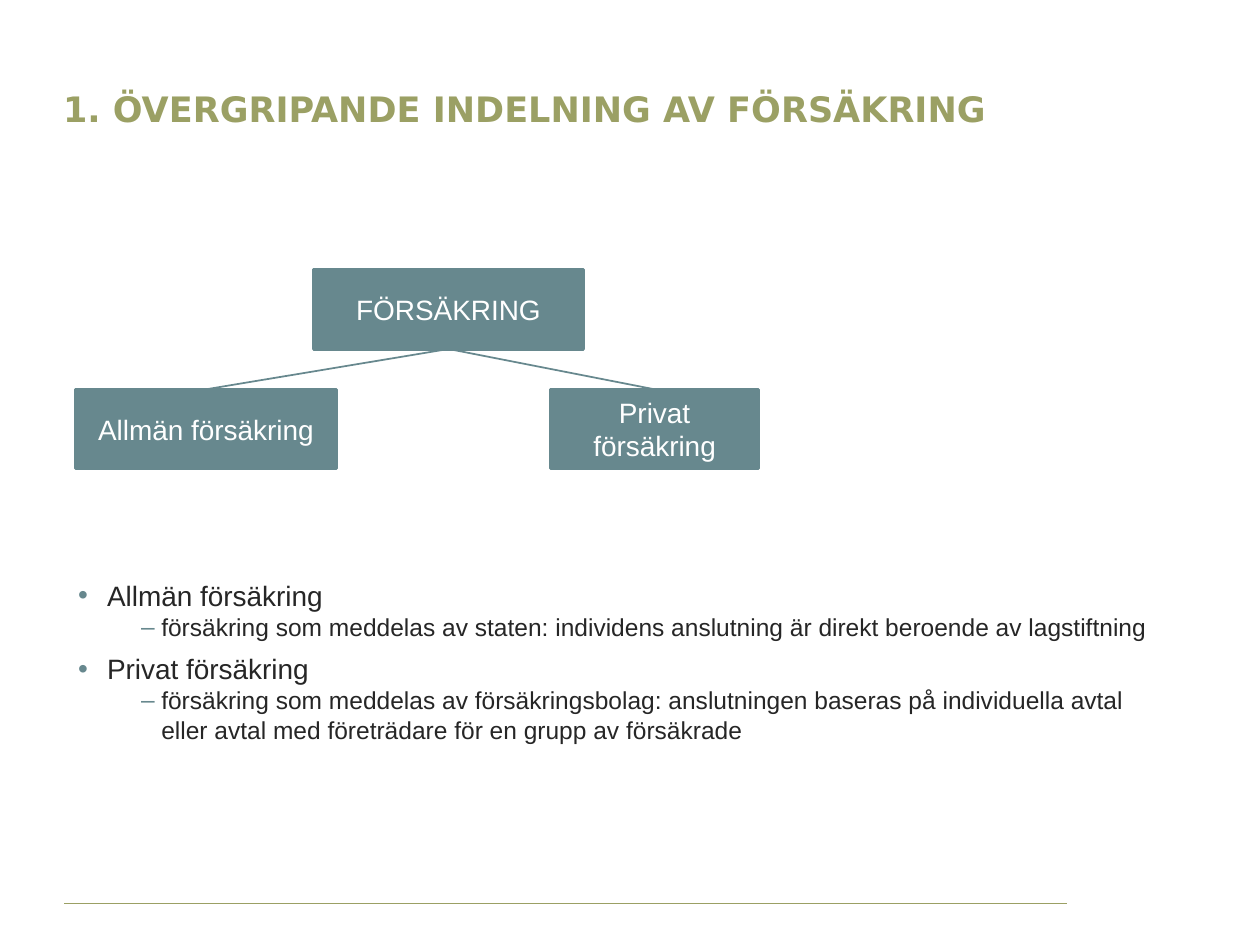
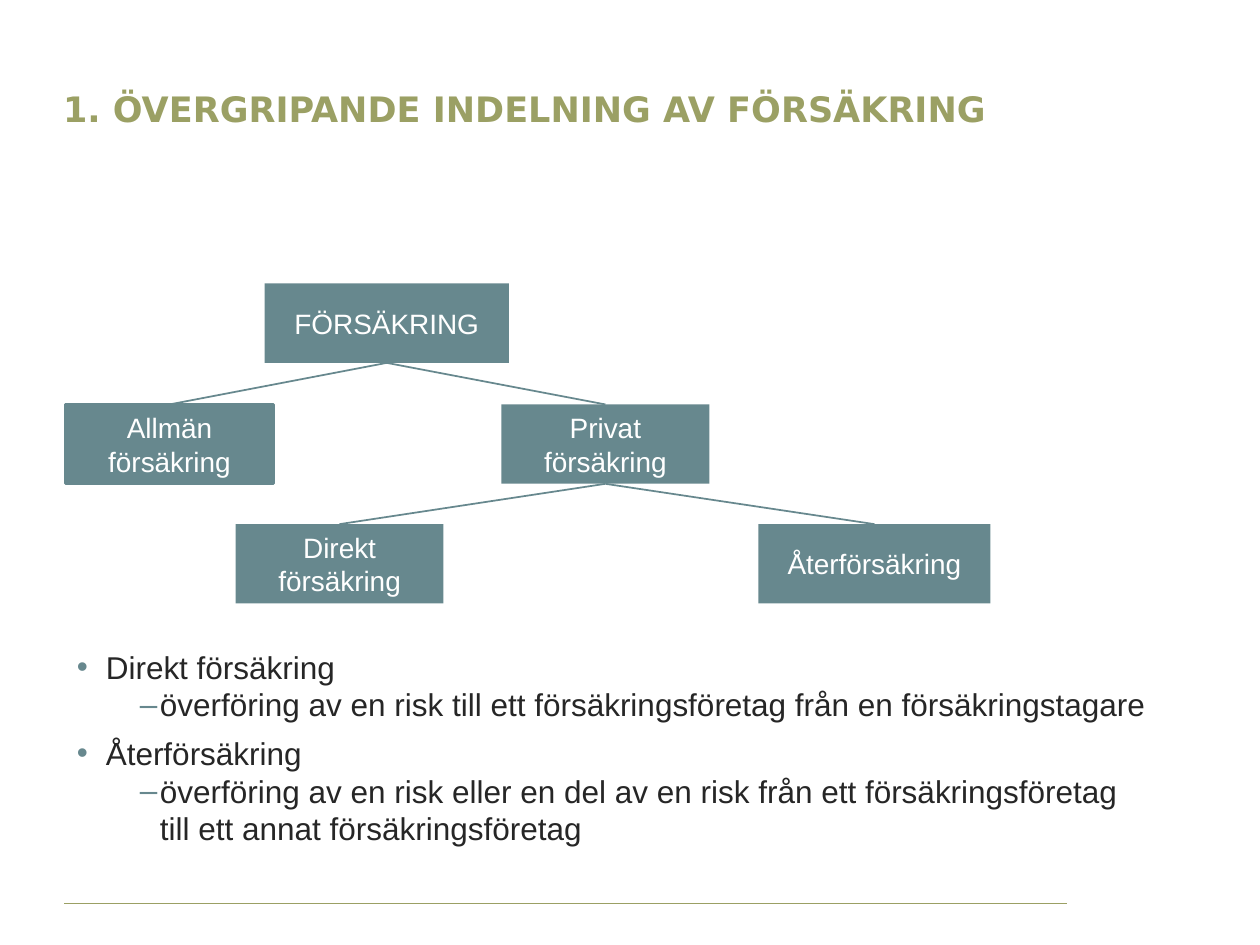
from lxml.etree import SubElement
from pptx import Presentation
from pptx.dml.color import RGBColor
from pptx.enum.shapes import MSO_CONNECTOR as CONNECTOR, MSO_SHAPE as SHAPE
from pptx.enum.text import MSO_ANCHOR as ANCHOR, MSO_AUTO_SIZE as AUTO_SIZE, PP_ALIGN as ALIGN
from pptx.oxml.ns import qn
from pptx.util import Inches, Pt

TEAL, OLIVE, DARK, WHITE = "67888E", "9BA064", "262626", "FFFFFF"
BODY_FONT, TITLE_FONT = "Arial", "DejaVu Sans"
TITLE = "1. ÖVERGRIPANDE INDELNING AV FÖRSÄKRING"
BOX_HEIGHT = 0.63
# Bullet, left margin, hanging indent and space before, by list level
LEVELS = [("•", 0.23, 0.23, 6), ("–", 0.66, 0.16, 0)]


def set_colour(colour_format, value):
    colour_format.rgb = RGBColor.from_string(value)


def write(paragraph, text, size=16, font=BODY_FONT, colour=DARK, bold=False, align=ALIGN.LEFT):
    paragraph.alignment = align
    run = paragraph.add_run()
    run.text = text
    run.font.size = Pt(size)
    run.font.name = font
    run.font.bold = bold
    set_colour(run.font.color, colour)


def place(shape, left, top, width, height):
    shape.left, shape.top = Inches(left), Inches(top)
    shape.width, shape.height = Inches(width), Inches(height)


def add_line(slide, start=(0, 0), end=(0, 0), colour=TEAL, width=1):
    line = slide.shapes.add_connector(CONNECTOR.STRAIGHT, *map(Inches, start + end))
    SubElement(line._element.spPr, qn("a:effectLst"))
    set_colour(line.line.color, colour)
    line.line.width = Pt(width)
    return line


def join(slide, parent, child):
    """Connect the bottom of the parent box to the top of the child box."""
    line = add_line(slide)
    line.begin_connect(parent, 2)
    line.end_connect(child, 0)


def add_box(slide, text, left, top, width, outlined=False):
    box = slide.shapes.add_shape(SHAPE.RECTANGLE, *map(Inches, (left, top, width, BOX_HEIGHT)))
    box.shadow.inherit = False
    box.fill.solid()
    set_colour(box.fill.fore_color, TEAL)
    if outlined:
        set_colour(box.line.color, TEAL)
        box.line.width = Pt(2)
    else:
        box.line.fill.background()
    frame = box.text_frame
    frame.word_wrap = True
    frame.vertical_anchor = ANCHOR.MIDDLE
    write(frame.paragraphs[0], text, colour=WHITE, align=ALIGN.CENTER)
    return box


def add_bullet(paragraph, level):
    symbol, margin, hanging, _ = LEVELS[level]
    properties = paragraph._p.get_or_add_pPr()
    properties.set("marL", str(Inches(margin)))
    properties.set("indent", str(-Inches(hanging)))
    colour = SubElement(properties, qn("a:buClr"))
    SubElement(colour, qn("a:srgbClr"), val=TEAL)
    SubElement(properties, qn("a:buFont"), typeface=BODY_FONT)
    SubElement(properties, qn("a:buChar"), char=symbol)


def fill_list(slide, items, sizes, position):
    """Write (level, text) items in the body placeholder, with one size per level."""
    body = slide.placeholders[1]
    place(body, *position)
    frame = body.text_frame
    frame.word_wrap = True
    frame.auto_size = AUTO_SIZE.NONE
    for index, (level, text) in enumerate(items):
        paragraph = frame.add_paragraph() if index else frame.paragraphs[0]
        paragraph.level = level
        paragraph.space_before = Pt(LEVELS[level][3] if index else 0)
        add_bullet(paragraph, level)
        write(paragraph, text, size=sizes[level])


def new_slide(presentation):
    """Add a slide with the shared title and bottom rule."""
    slide = presentation.slides.add_slide(presentation.slide_layouts[1])
    add_line(slide, (0.51, 7.17), (8.47, 7.17), colour=OLIVE, width=0.75)
    title = slide.shapes.title
    place(title, 0.5, 0.37, 8.98, 0.71)
    frame = title.text_frame
    frame.auto_size = AUTO_SIZE.NONE
    frame.vertical_anchor = ANCHOR.BOTTOM
    frame.margin_left = frame.margin_right = 0
    write(frame.paragraphs[0], TITLE, size=20, font=TITLE_FONT, colour=OLIVE, bold=True)
    return slide


def build_main_division(presentation):
    slide = new_slide(presentation)
    insurance = add_box(slide, "FÖRSÄKRING", 2.49, 2.14, 2.14, outlined=True)
    public = add_box(slide, "Allmän försäkring", 0.6, 3.09, 2.07, outlined=True)
    private = add_box(slide, "Privat försäkring", 4.37, 3.09, 1.65, outlined=True)
    for child in (public, private):
        join(slide, insurance, child)
    fill_list(slide, [
        (0, "Allmän försäkring"),
        (1, "försäkring som meddelas av staten: individens anslutning är direkt "
            "beroende av lagstiftning"),
        (0, "Privat försäkring"),
        (1, "försäkring som meddelas av försäkringsbolag: anslutningen baseras på "
            "individuella avtal eller avtal med företrädare för en grupp av försäkrade"),
    ], sizes=(16, 14), position=(0.52, 4.54, 8.75, 2.43))


def build_private_division(presentation):
    slide = new_slide(presentation)
    insurance = add_box(slide, "FÖRSÄKRING", 2.1, 2.25, 1.94)
    public = add_box(slide, "Allmän försäkring", 0.52, 3.21, 1.65, outlined=True)
    private = add_box(slide, "Privat försäkring", 3.98, 3.21, 1.65)
    direct = add_box(slide, "Direkt försäkring", 1.87, 4.16, 1.65)
    reinsurance = add_box(slide, "Återförsäkring", 6.02, 4.16, 1.84)
    for parent, children in ((insurance, (public, private)), (private, (direct, reinsurance))):
        for child in children:
            join(slide, parent, child)
    fill_list(slide, [
        (0, "Direkt försäkring"),
        (1, "överföring av en risk till ett försäkringsföretag från en försäkringstagare"),
        (0, "Återförsäkring"),
        (1, "överföring av en risk eller en del av en risk från ett försäkringsföretag "
            "till ett annat försäkringsföretag"),
    ], sizes=(18, 18), position=(0.51, 5.09, 8.75, 1.6))


def main():
    presentation = Presentation()
    presentation.slide_width, presentation.slide_height = Inches(10), Inches(7.5)
    build_main_division(presentation)
    build_private_division(presentation)
    presentation.save("out.pptx")


if __name__ == "__main__":
    main()
